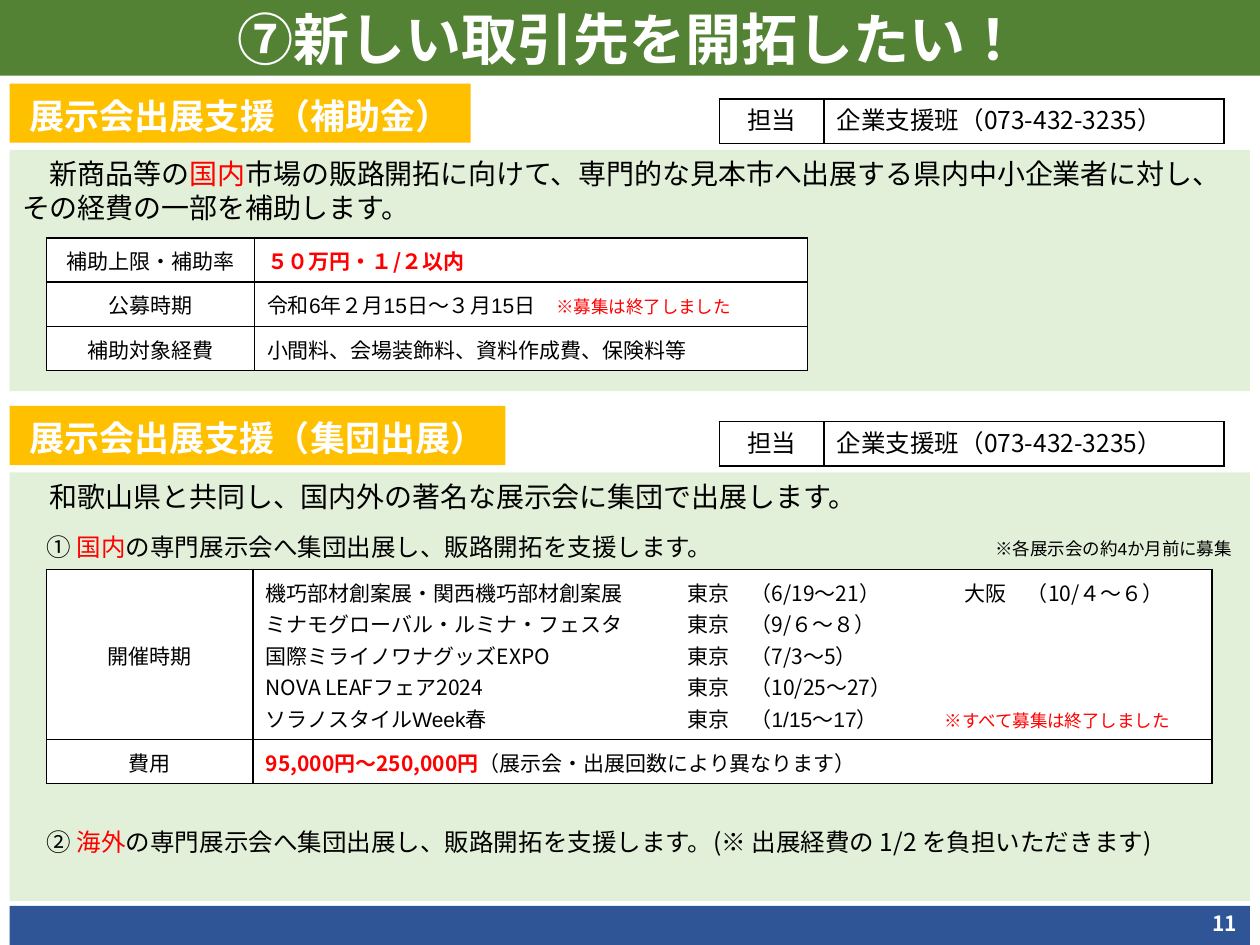
from pptx import Presentation
from pptx.dml.color import RGBColor
from pptx.enum.lang import MSO_LANGUAGE_ID
from pptx.enum.shapes import MSO_SHAPE
from pptx.enum.text import MSO_ANCHOR, PP_ALIGN
from pptx.oxml.ns import qn
from pptx.util import Pt
from lxml import etree

RECTANGLE = MSO_SHAPE.RECTANGLE
MIDDLE, TOP = MSO_ANCHOR.MIDDLE, MSO_ANCHOR.TOP
LEFT, CENTER, RIGHT = PP_ALIGN.LEFT, PP_ALIGN.CENTER, PP_ALIGN.RIGHT
JAPANESE = MSO_LANGUAGE_ID.JAPANESE

WHITE = RGBColor(0xFF, 0xFF, 0xFF)
BLACK = RGBColor(0x00, 0x00, 0x00)
RED = RGBColor(0xFF, 0x00, 0x00)
DARK_GREEN = RGBColor(0x54, 0x82, 0x35)
PALE_GREEN = RGBColor(0xE2, 0xF0, 0xD9)
AMBER = RGBColor(0xFF, 0xC0, 0x00)
BLUE = RGBColor(0x2F, 0x55, 0x97)

NOTO, ARIAL, CALIBRI = "Noto Sans CJK JP", "Arial", "Calibri"
ROW_HEIGHT = 25.2
PANEL_LEFT, PANEL_WIDTH = 5.5, 708.7
TABLE_LEFT = 26.6


def add_run(paragraph, text, size, color=BLACK, bold=False, font=NOTO):
    run = paragraph.add_run()
    run.text = text
    run.font.size = Pt(size)
    run.font.color.rgb = color
    run.font.bold = bold
    run.font.name = font
    run.font.language_id = JAPANESE
    east_asian = etree.SubElement(run.font._element, qn("a:ea"))
    east_asian.set("typeface", NOTO)


def write_paragraph(paragraph, runs, align=LEFT, spacing=None, before=0, tabs=()):
    """Fill a paragraph; each run is (text, size, optional colour, bold, font)."""
    paragraph.alignment = align
    paragraph.space_before = Pt(before)
    if spacing:
        paragraph.line_spacing = Pt(spacing)
    if tabs:
        tab_list = etree.SubElement(paragraph._p.get_or_add_pPr(), qn("a:tabLst"))
        for position in tabs:
            etree.SubElement(tab_list, qn("a:tab"), pos=str(Pt(position)), algn="l")
    for run in runs:
        add_run(paragraph, *run)


def add_paragraphs(text_frame, paragraphs):
    """Write paragraphs given as dicts of write_paragraph arguments."""
    for index, content in enumerate(paragraphs):
        paragraph = text_frame.paragraphs[0] if index == 0 else text_frame.add_paragraph()
        write_paragraph(paragraph, **content)


def add_box(slide, box, color, paragraphs=(), anchor=MIDDLE):
    shape = slide.shapes.add_shape(RECTANGLE, *map(Pt, box))
    shape.shadow.inherit = False
    shape.fill.solid()
    shape.fill.fore_color.rgb = color
    shape.line.fill.background()
    shape.text_frame.word_wrap = True
    shape.text_frame.vertical_anchor = anchor
    add_paragraphs(shape.text_frame, paragraphs)
    return shape


def add_label(slide, box, runs, align, spacing=None):
    text_frame = slide.shapes.add_textbox(*map(Pt, box)).text_frame
    text_frame.word_wrap = False
    text_frame.vertical_anchor = MIDDLE
    write_paragraph(text_frame.paragraphs[0], runs, align, spacing)


def add_section_tag(slide, top, width, text, font):
    content = {"runs": [(text, 20, WHITE, True, font)], "align": CENTER}
    shape = add_box(slide, (PANEL_LEFT, top, width, 33.8), AMBER, [content])
    shape.text_frame.margin_top = Pt(5.8)


def add_borders(cell):
    properties = cell._tc.get_or_add_tcPr()
    for side in ("lnL", "lnR", "lnT", "lnB"):
        line = etree.SubElement(properties, qn(f"a:{side}"), w=str(Pt(1)))
        fill = etree.SubElement(line, qn("a:solidFill"))
        etree.SubElement(fill, qn("a:srgbClr"), val=str(BLACK))


def add_info_table(slide, left, top, widths, heights, rows, size=12):
    """Add rows of (heading, paragraphs) with a centred heading column."""
    frame = slide.shapes.add_table(
        len(rows), 2, Pt(left), Pt(top), Pt(sum(widths)), Pt(sum(heights)))
    table = frame.table
    for column, width in zip(table.columns, widths):
        column.width = Pt(width)
    for row, height, (heading, paragraphs) in zip(table.rows, heights, rows):
        row.height = Pt(height)
        title = {"runs": [(heading, size)], "align": CENTER}
        for cell, contents in zip(row.cells, ([title], paragraphs)):
            add_borders(cell)
            cell.fill.solid()
            cell.fill.fore_color.rgb = WHITE
            cell.vertical_anchor = MIDDLE
            add_paragraphs(cell.text_frame, [{"spacing": 18, **c} for c in contents])


def add_contact(slide, top):
    contact = {"runs": [("企業支援班（073-432-3235）", 14)]}
    add_info_table(slide, 411.1, top, (59.8, 228.5), (ROW_HEIGHT,),
                   [("担当", [contact])], size=14)


def add_subsidy_section(slide):
    introduction = {
        "spacing": 19.5,
        "runs": [
            ("　新商品等の", 16),
            ("国内", 16, RED),
            ("市場の販路開拓に向けて、専門的な見本市へ出展する県内中小企業者に対し、"
             "その経費の一部を補助します。", 16),
        ],
    }
    add_box(slide, (PANEL_LEFT, 85.6, PANEL_WIDTH, 138), PALE_GREEN, [introduction], TOP)
    add_section_tag(slide, 47.8, 263.5, "展示会出展支援（補助金）", NOTO)
    add_contact(slide, 56.7)
    period = [("令和6年２月15日～３月15日　", 12, BLACK, False, ARIAL),
              ("※募集は終了しました", 10, RED, False, ARIAL)]
    costs = [("小間料、会場装飾料、資料作成費、保険料等", 12, BLACK, False, CALIBRI)]
    add_info_table(slide, TABLE_LEFT, 136, (118.8, 316), (ROW_HEIGHT,) * 3, [
        ("補助上限・補助率", [{"runs": [("５０万円・１/２以内", 12, RED, True)]}]),
        ("公募時期", [{"runs": period}]),
        ("補助対象経費", [{"runs": costs}]),
    ])


def support_line(number, region, note, before):
    return {
        "spacing": 18,
        "before": before,
        "runs": [
            (f"　{number} ", 14),
            (region, 14, RED),
            ("の専門展示会へ集団出展し、販路開拓を支援します。" + note, 14),
        ],
    }


def add_group_section(slide):
    add_box(slide, (PANEL_LEFT, 270, PANEL_WIDTH, 244.8), PALE_GREEN, [
        {"runs": [("　和歌山県と共同し、国内外の著名な展示会に集団で出展します。", 16)],
         "spacing": 19.5},
        support_line("①", "国内", "", 10),
        support_line("②", "海外", "(※ 出展経費の 1/2 を負担いただきます)", 150.5),
    ], TOP)
    add_section_tag(slide, 232, 283.4, "展示会出展支援（集団出展）", ARIAL)
    add_contact(slide, 241)
    city_tab = 241
    events = [
        {"runs": [("機巧部材創案展・関西機巧部材創案展\t東京　（6/19～21）\t大阪　（10/４～６）", 12)],
         "tabs": (city_tab, 399)},
        {"runs": [("ミナモグローバル・ルミナ・フェスタ\t東京　（9/６～８）", 12)],
         "tabs": (city_tab,)},
        {"runs": [("国際ミライノワナグッズEXPO\t東京　（7/3～5）", 12)],
         "tabs": (city_tab,)},
        {"runs": [("NOVA LEAFフェア2024\t東京　（10/25～27）", 12)],
         "tabs": (city_tab,)},
        {"runs": [("ソラノスタイルWeek春\t東京　（1/15～17）\t", 12, BLACK, False, ARIAL),
                  ("※すべて募集は終了しました", 10, RED, False, ARIAL)],
         "tabs": (city_tab, 388)},
    ]
    fee = [("95,000円～250,000円", 12, RED, True),
           ("（展示会・出展回数により異なります）", 12)]
    add_info_table(slide, TABLE_LEFT, 325.4, (118.1, 548), (97.2, ROW_HEIGHT), [
        ("開催時期", events),
        ("費用", [{"runs": fee}]),
    ])
    add_label(slide, (559.4, 292.6, 154, 30.2),
              [("※各展示会の約4か月前に募集", 10, BLACK, False, ARIAL)], CENTER, 24)


def main():
    presentation = Presentation()
    presentation.slide_width, presentation.slide_height = Pt(720), Pt(540)
    slide = presentation.slides.add_slide(presentation.slide_layouts[6])
    add_box(slide, (PANEL_LEFT, 517.7, PANEL_WIDTH, 22.3), BLUE)
    title = {"runs": [("⑦新しい取引先を開拓したい！", 32, WHITE, True)], "align": CENTER}
    add_box(slide, (0, 0, 720, 43.2), DARK_GREEN, [title])
    add_subsidy_section(slide)
    add_group_section(slide)
    add_label(slide, (680.4, 514.8, 33.8, 25.2), [("11", 12, WHITE, True)], RIGHT)
    presentation.save("out.pptx")


if __name__ == "__main__":
    main()
